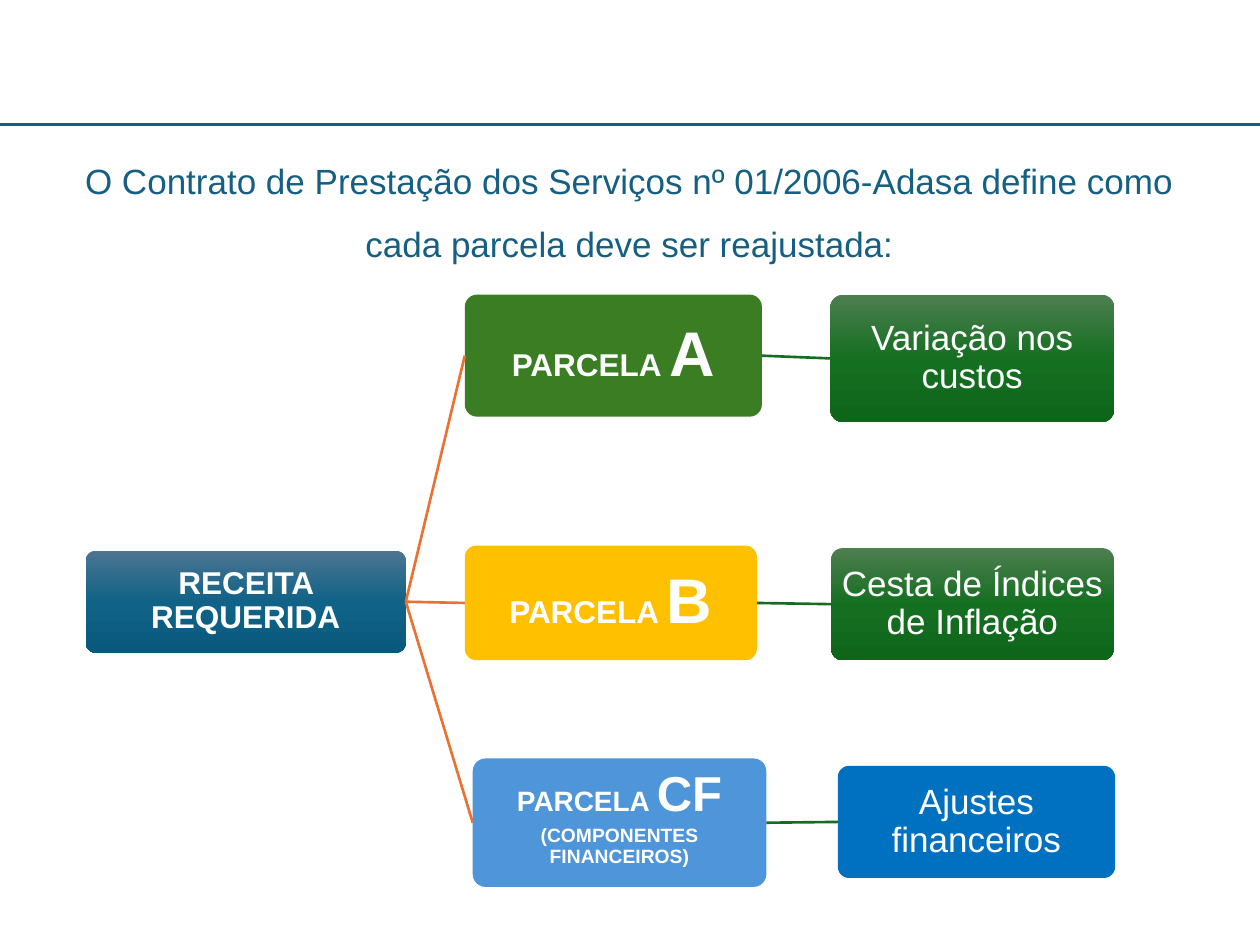
from copy import deepcopy

from lxml import etree
from pptx import Presentation
from pptx.dml.color import RGBColor
from pptx.enum.shapes import MSO_CONNECTOR, MSO_SHAPE
from pptx.enum.text import MSO_ANCHOR, MSO_AUTO_SIZE, PP_ALIGN
from pptx.oxml.ns import qn
from pptx.util import Cm, Pt

STRAIGHT = MSO_CONNECTOR.STRAIGHT
ROUND = MSO_SHAPE.ROUNDED_RECTANGLE
TOP, MIDDLE = MSO_ANCHOR.TOP, MSO_ANCHOR.MIDDLE
CENTER = PP_ALIGN.CENTER
NO_FIT = MSO_AUTO_SIZE.NONE

FONT = "Arial"
TEAL, WHITE = "156082", "FFFFFF"
ORANGE, GREEN = "E97132", "196B24"
BLUES = ["4C7591", "106287", "09597D"]
GREENS = ["4D7E50", "156F21", "0F661B"]
LEFT, RIGHT = 1, 3

# Each branch: share box, its fill and lines, then rule box, its fill and text.
# A line is a list of (text, size) runs.
ROWS = [
    ((9.37, 5.94, 5.99, 2.46), ["3B7D23"],
     [[("PARCELA ", 18), ("A", 36)]],
     (16.74, 5.94, 5.72, 2.57), GREENS, "Variação nos custos"),
    ((9.37, 11, 5.89, 2.31), ["FFC000"],
     [[("PARCELA ", 18), ("B", 36)]],
     (16.76, 11.05, 5.69, 2.26), GREENS, "Cesta de Índices de Inflação"),
    ((9.53, 15.29, 5.92, 2.59), ["4E95D9"],
     [[("PARCELA", 16), (" ", 14), ("CF", 28)],
      [("(COMPONENTES FINANCEIROS)", 11)]],
     (16.89, 15.44, 5.59, 2.26), ["0070C0"], "Ajustes financeiros"),
]


def rgb(code):
    return RGBColor.from_string(code)


def paint(shape, tints):
    """Fill with one colour, or with a top-down gradient of several."""
    fill = shape.fill
    if len(tints) == 1:
        fill.solid()
        fill.fore_color.rgb = rgb(tints[0])
        return
    fill.gradient()
    fill.gradient_angle = 270
    stops = shape._element.spPr.find(".//" + qn("a:gsLst"))
    while len(stops) < len(tints):
        stops.append(deepcopy(stops[0]))
    for i, (stop, tint) in enumerate(zip(fill.gradient_stops, tints)):
        stop.position = i / (len(tints) - 1)
        stop.color.rgb = rgb(tint)


def style(para, color, bold, space):
    para.alignment = CENTER
    para.line_spacing = space
    para.font.name = FONT
    para.font.bold = bold
    para.font.color.rgb = rgb(color)


def add_box(slide, area, tints, lines, bold=True, foot=0.03):
    """Add a rounded box; foot is the bottom inset in cm."""
    box = slide.shapes.add_shape(ROUND, *map(Cm, area))
    box.adjustments[0] = 0.1
    box.shadow.inherit = False
    box.line.fill.background()
    paint(box, tints)
    frame = box.text_frame
    frame.word_wrap = True
    frame.vertical_anchor = MIDDLE
    frame.margin_left = frame.margin_right = frame.margin_top = Cm(0.03)
    frame.margin_bottom = Cm(foot)
    for i, line in enumerate(lines):
        para = frame.add_paragraph() if i else frame.paragraphs[0]
        style(para, WHITE, bold, 0.9)
        if i < len(lines) - 1:
            para.space_after = Pt(2)
        for text, size in line:
            run = para.add_run()
            run.text = text
            run.font.size = Pt(size)
    return box


def add_line(slide, color, width, ends=(0, 0, 0, 0)):
    line = slide.shapes.add_connector(STRAIGHT, *map(Cm, ends))
    line.line.color.rgb = rgb(color)
    line.line.width = Pt(width)
    etree.SubElement(line._element.spPr, qn("a:effectLst"))
    return line


def join(slide, start, end, color):
    line = add_line(slide, color, 1.5)
    line.begin_connect(start, RIGHT)
    line.end_connect(end, LEFT)


def set_title(slide, text):
    title = slide.shapes.title
    title.left, title.top = Cm(0.79), Cm(2.67)
    title.width, title.height = Cm(23.8), Cm(2.69)
    frame = title.text_frame
    frame.text = text
    frame.word_wrap = True
    frame.auto_size = NO_FIT
    frame.vertical_anchor = TOP
    para = frame.paragraphs[0]
    style(para, TEAL, False, 1.5)
    para.font.size = Pt(20)


def main():
    deck = Presentation()
    deck.slide_width, deck.slide_height = Cm(25.4), Cm(19.05)
    slide = deck.slides.add_slide(deck.slide_layouts[5])
    set_title(slide, "O Contrato de Prestação dos Serviços nº 01/2006-Adasa "
                     "define como cada parcela deve ser reajustada:")
    add_line(slide, TEAL, 2, (0, 2.51, 25.4, 2.51))
    root = add_box(slide, (1.73, 11.1, 6.45, 2.06), BLUES,
                   [[("RECEITA REQUERIDA", 18)]])
    for area, tints, lines, spot, shades, text in ROWS:
        foot = 0.2 if len(lines) > 1 else 0.03
        share = add_box(slide, area, tints, lines, foot=foot)
        rule = add_box(slide, spot, shades, [[(text, 20)]], bold=False)
        join(slide, root, share, ORANGE)
        join(slide, share, rule, GREEN)
    deck.save("out.pptx")


if __name__ == "__main__":
    main()
